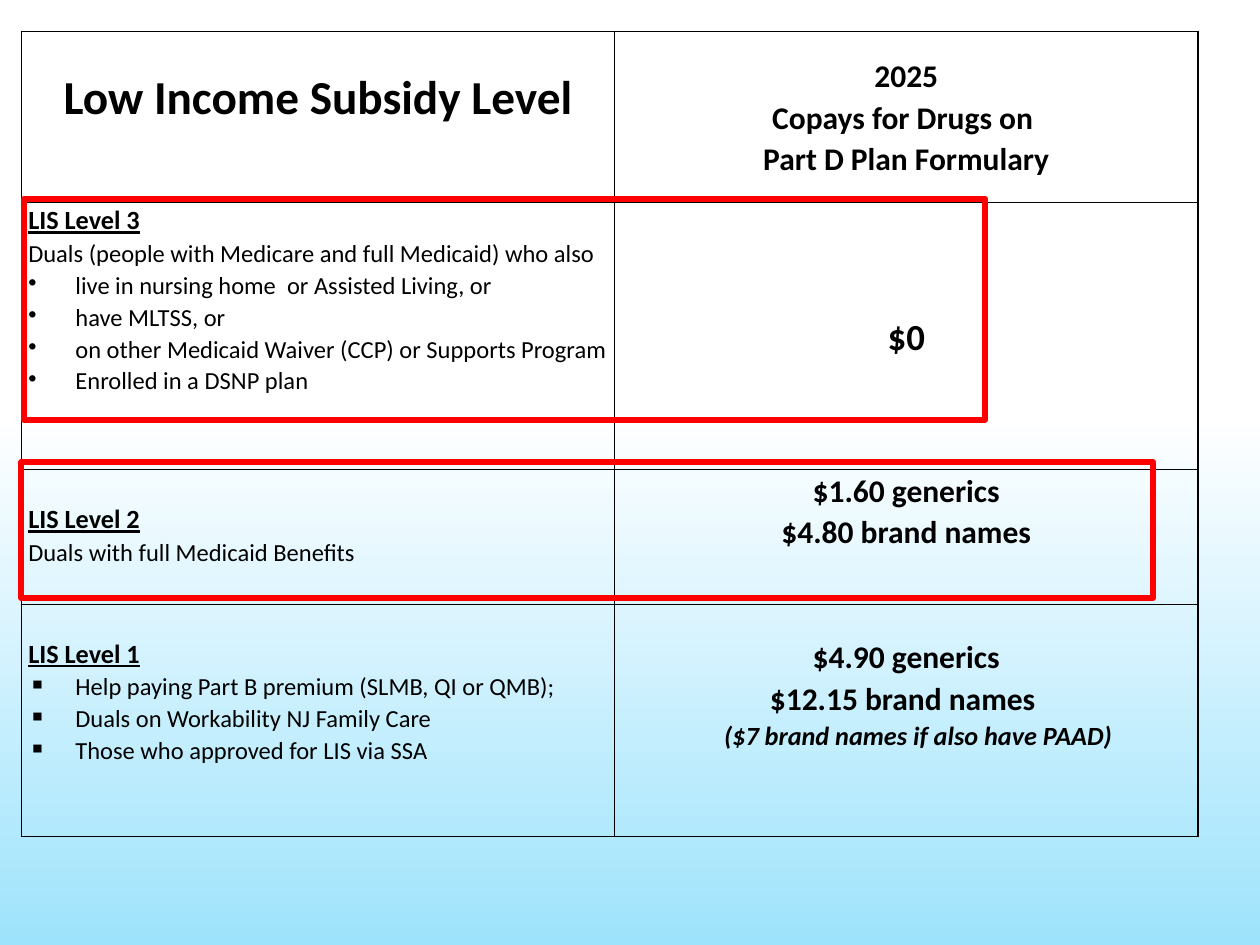
from pptx import Presentation
from pptx.dml.color import RGBColor
from pptx.enum import shapes, text
from pptx.oxml import parse_xml
from pptx.oxml.ns import nsdecls
from pptx.util import Cm, Pt

HUES = {"ink": "000000", "mark": "FF0000", "top": "FFFFFF", "base": "9EE3FC"}
LEFT, MID = text.PP_ALIGN.LEFT, text.PP_ALIGN.CENTER
LINE = 1.07
GAP = 0.64  # one 14 pt line, in cm


def hue(name):
    return RGBColor.from_string(HUES[name])


def para(words, size=14, bold=False, under=False, slant=False, dot=None, shift=0):
    return dict(words=words, size=size, bold=bold, under=under, slant=slant,
                dot=dot, shift=shift)


def head(words):
    return para(words, 15, bold=True, under=True)


def cost(words, size=18):
    return para(words, size, bold=True)


def items(dot, *lines):
    return [para(line, dot=dot) for line in lines]


# Each cell: paragraphs, alignment, middle anchor, top and bottom inset in cm
ROWS = [
    [([cost("Low Income Subsidy Level", 27)], MID, True, 0, 0.83),
     ([cost("2025"), cost("Copays for Drugs on "), cost("Part D Plan Formulary")],
      MID, True, 0, 0)],
    [([head("LIS Level 3"),
       para("Duals (people with Medicare and full Medicaid) who also"),
       *items("•", "live in nursing home  or Assisted Living, or",
              "have MLTSS, or",
              "on other Medicaid Waiver (CCP) or Supports Program",
              "Enrolled in a DSNP plan")], LEFT, False, 0, 0),
     ([cost("$0", 21)], MID, True, 0, 0)],
    [([head("LIS Level 2"), para("Duals with full Medicaid Benefits")],
      LEFT, False, GAP, 0),
     ([cost("$1.60 generics"), cost("$4.80 brand names")], MID, False, 0, 0)],
    [([head("LIS Level 1"),
       *items("▪", "Help paying Part B premium (SLMB, QI or QMB);",
              "Duals on Workability NJ Family Care",
              "Those who approved for LIS via SSA")], LEFT, False, GAP, 0),
     ([cost("$4.90 generics"), cost("$12.15 brand names "),
       para("($7 brand names if also have PAAD) ", 15, bold=True, slant=True,
            shift=0.6)], MID, False, GAP, 0)],
]


def write(p, part, align):
    p.alignment, p.line_spacing = align, LINE
    props = p._p.get_or_add_pPr()
    if part["dot"]:
        props.set("marL", str(Cm(0.95)))
        props.set("indent", str(-Cm(0.95)))
        props.append(parse_xml(f'<a:buChar {nsdecls("a")} char="{part["dot"]}"/>'))
    elif part["shift"]:
        props.set("marL", str(Cm(part["shift"])))
    run = p.add_run()
    run.text = part["words"]
    font = run.font
    font.name, font.size = "Calibri", Pt(part["size"])
    font.bold, font.italic, font.underline = part["bold"], part["slant"], part["under"]
    font.color.rgb = hue("ink")


def frame(cell):
    """Thin border on all four sides, no fill."""
    props = cell._tc.get_or_add_tcPr()
    for side in "LRTB":
        props.append(parse_xml(
            f'<a:ln{side} {nsdecls("a")} w="{Pt(1)}"><a:solidFill>'
            f'<a:srgbClr val="{HUES["ink"]}"/></a:solidFill></a:ln{side}>'))
    cell.fill.background()


def fill(cell, parts, align, middle, top, low):
    cell.margin_left = cell.margin_right = Cm(0.14)
    cell.margin_top, cell.margin_bottom = Cm(top), Cm(low)
    cell.vertical_anchor = text.MSO_ANCHOR.MIDDLE if middle else text.MSO_ANCHOR.TOP
    body = cell.text_frame
    for n, part in enumerate(parts):
        write(body.add_paragraph() if n else body.paragraphs[0], part, align)
    frame(cell)


def grid(slide, x, y, wide, high):
    """Copay table; columns and rows share the box by weight."""
    cols, rows = (4.71, 4.63), (1.36, 2.12, 1.07, 1.84)
    table = slide.shapes.add_table(len(rows), len(cols), Cm(x), Cm(y),
                                   Cm(wide), Cm(high)).table
    table.first_row = table.horz_banding = False
    for col, part in zip(table.columns, cols):
        col.width = Cm(wide * part / sum(cols))
    for row, part in zip(table.rows, rows):
        row.height = Cm(high * part / sum(rows))
    for r, line in enumerate(ROWS):
        for c, data in enumerate(line):
            fill(table.cell(r, c), *data)


def mark(slide, x, y, wide, high):
    """Red outline around a level."""
    box = slide.shapes.add_shape(shapes.MSO_SHAPE.RECTANGLE,
                                 Cm(x), Cm(y), Cm(wide), Cm(high))
    box.shadow.inherit = False
    box.fill.background()
    box.line.color.rgb, box.line.width = hue("mark"), Pt(3.5)


def sky(slide):
    """White fading to light blue at the foot."""
    paint = slide.background.fill
    paint.gradient()
    paint.gradient_angle = 270
    for stop, (name, place) in zip(paint.gradient_stops,
                                   (("top", 0.44), ("base", 1.0))):
        stop.color.rgb, stop.position = hue(name), place


def main():
    deck = Presentation()
    deck.slide_width, deck.slide_height = Cm(25.4), Cm(19.05)
    slide = deck.slides.add_slide(deck.slide_layouts[6])
    sky(slide)
    grid(slide, 0.43, 0.63, 23.72, 16.23)
    mark(slide, 0.48, 4.01, 19.38, 4.45)
    mark(slide, 0.43, 9.32, 22.81, 2.74)
    deck.save("out.pptx")


if __name__ == "__main__":
    main()
